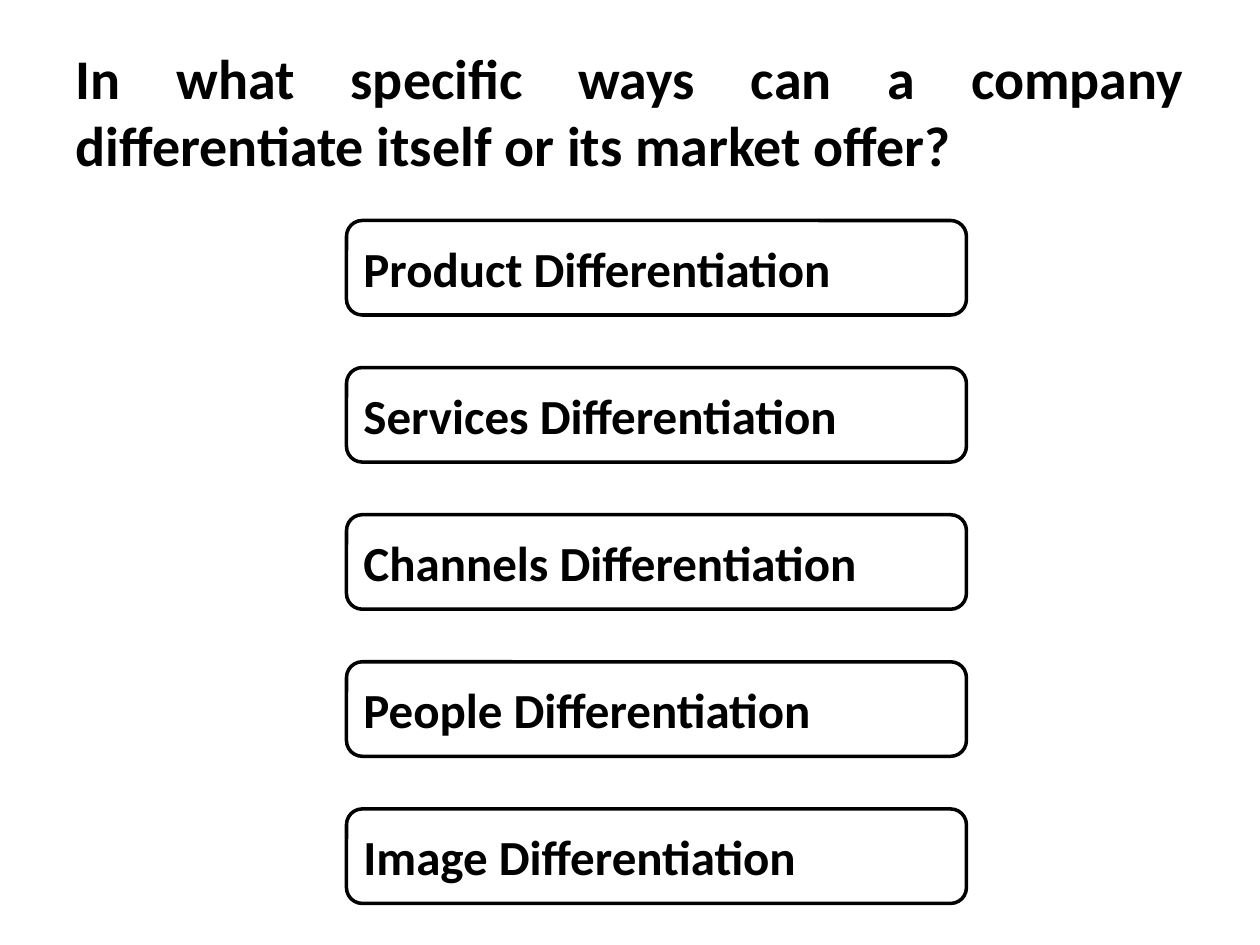
import pptx
import pptx.util
import pptx.dml.color
import pptx.enum.shapes
import pptx.enum.text

Inches = pptx.util.Inches
Pt = pptx.util.Pt
RGBColor = pptx.dml.color.RGBColor
PP_ALIGN = pptx.enum.text.PP_ALIGN
MIDDLE = pptx.enum.text.MSO_ANCHOR.MIDDLE

COLORS = {"ink": "000000", "paper": "FFFFFF"}
KINDS = ["Product", "Services", "Channels", "People", "Image"]
FIRST_TOP, LAST_TOP = 1.75, 6.42


def write_text(shape, text, size, alignment):
    frame = shape.text_frame
    frame.word_wrap = True
    frame.vertical_anchor = MIDDLE
    para = frame.paragraphs[0]
    para.alignment = alignment
    span = para.add_run()
    span.text = text
    font_values = {"name": "Calibri", "size": Pt(size), "bold": True}
    for name, value in font_values.items():
        setattr(span.font, name, value)
    span.font.color.rgb = RGBColor.from_string(COLORS["ink"])


deck = pptx.Presentation()
deck.slide_width = Inches(10)
deck.slide_height = Inches(7.5)
page = deck.slides.add_slide(deck.slide_layouts.get_by_name("Title Only"))
page.background.fill.solid()
page.background.fill.fore_color.rgb = RGBColor.from_string(COLORS["paper"])

title = page.shapes.title
title_place = {"left": 0.5, "top": 0.25, "width": 9, "height": 1.25}
for name, value in title_place.items():
    setattr(title, name, Inches(value))
write_text(
    title,
    "In what specific ways can a company differentiate itself or its market offer?",
    32,
    PP_ALIGN.JUSTIFY,
)

pitch = (LAST_TOP - FIRST_TOP) / (len(KINDS) - 1)
for index, kind in enumerate(KINDS):
    box = page.shapes.add_shape(
        pptx.enum.shapes.MSO_SHAPE.ROUNDED_RECTANGLE,
        Inches(2.75),
        Inches(FIRST_TOP + index * pitch),
        Inches(4.92),
        Inches(0.75),
    )
    box.shadow.inherit = False
    box.fill.solid()
    box.fill.fore_color.rgb = RGBColor.from_string(COLORS["paper"])
    box.line.color.rgb = RGBColor.from_string(COLORS["ink"])
    box.line.width = Pt(2)
    write_text(box, f"{kind} Differentiation", 28, PP_ALIGN.LEFT)

deck.save("out.pptx")
